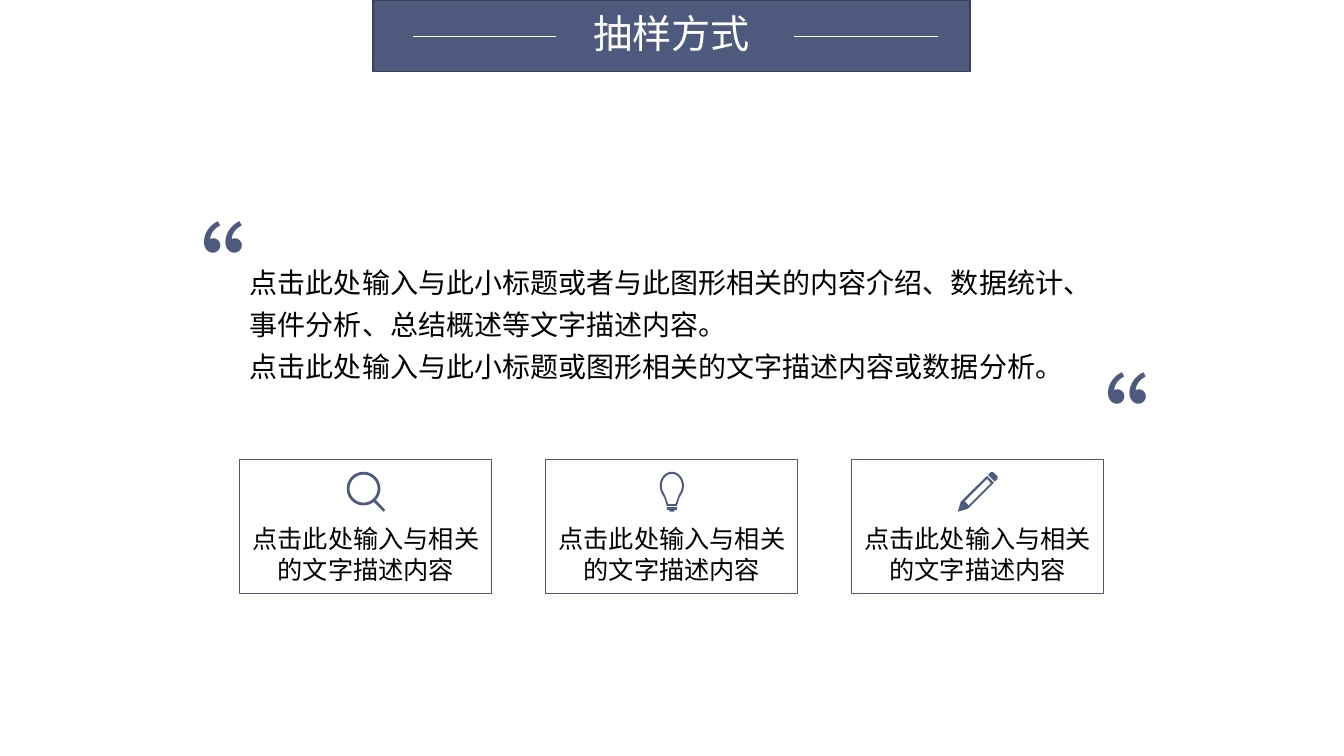
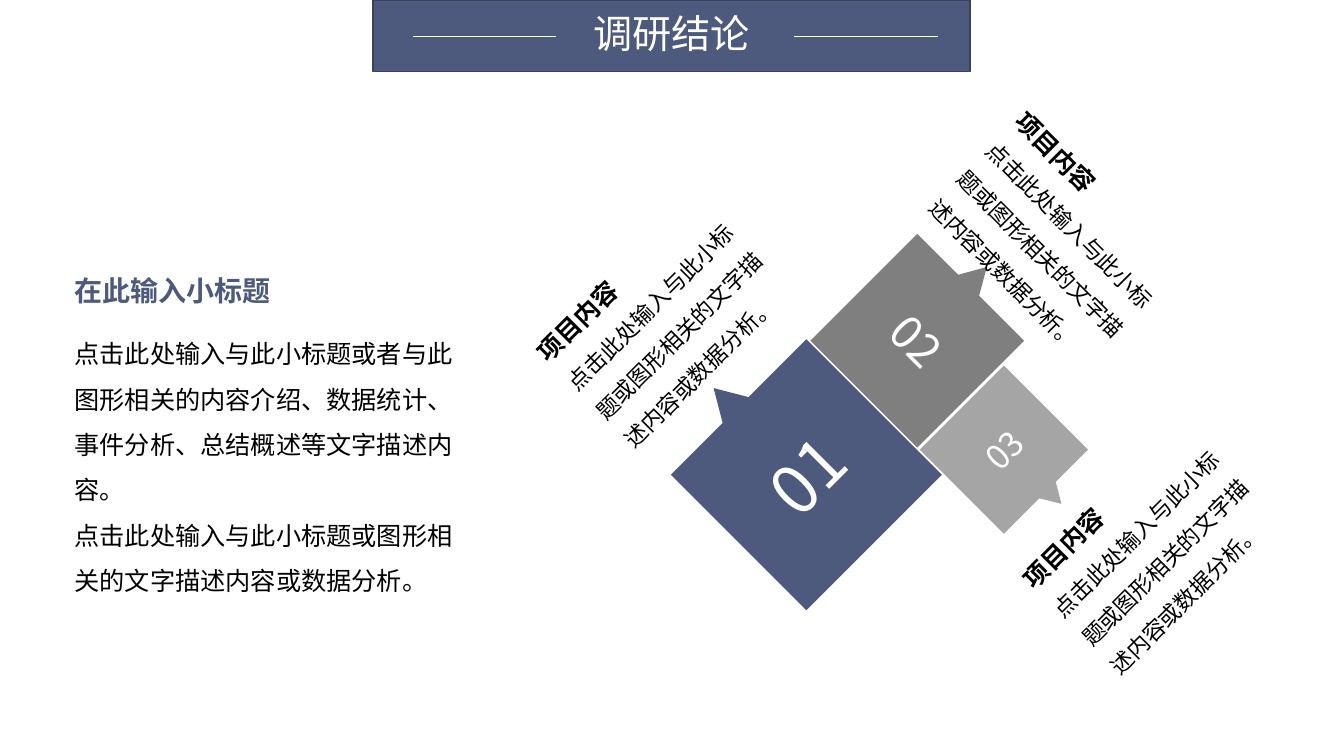
import math
from dataclasses import dataclass

import pptx
import pptx.dml.color
import pptx.enum.lang
import pptx.enum.shapes
import pptx.enum.text
import pptx.oxml
import pptx.oxml.ns
import pptx.util
from pptx.shapes.autoshape import Shape
from pptx.slide import Slide
from pptx.text.text import TextFrame

Pt = pptx.util.Pt
SHAPES = pptx.enum.shapes.MSO_SHAPE
ALIGN = pptx.enum.text.PP_ALIGN
ANCHOR = pptx.enum.text.MSO_ANCHOR
AUTO_SIZE = pptx.enum.text.MSO_AUTO_SIZE

FONT = "Noto Sans CJK SC"
NAVY = "4D5A7D"
NAVY_EDGE = "39435C"
GRAY = "7F7F7F"
LIGHT_GRAY = "A5A5A5"
WHITE = "FFFFFF"
BLACK = "000000"

SLIDE_WIDTH, SLIDE_HEIGHT = 960, 540
LONG_TEXT = "点击此处输入与此小标题或者与此图形相关的内容介绍、数据统计、事件分析、总结概述等文字描述内容。"
SHORT_TEXT = "点击此处输入与此小标题或图形相关的文字描述内容或数据分析。"
CARD_TEXT = "点击此处输入与相关的文字描述内容"

Point = tuple[float, float]
Contour = list[Point]


@dataclass(frozen=True)
class Box:
    """A frame in points, turned by rotation degrees about its centre."""
    left: float
    top: float
    width: float
    height: float
    rotation: float = 0


@dataclass(frozen=True)
class Icon:
    """Closed outlines in points; an outline inside another cuts a hole."""
    width: float
    contours: list[Contour]


@dataclass(frozen=True)
class Step:
    number: str
    size: float
    color: str
    tile: Box
    pointer: Box
    note: Box


def color_of(hex_code: str) -> pptx.dml.color.RGBColor:
    return pptx.dml.color.RGBColor.from_string(hex_code)


def write_text(frame: TextFrame, text: str, *, size: float, color: str = BLACK,
               bold: bool = False, align: ALIGN = ALIGN.LEFT,
               spacing: float = 1.0) -> None:
    """Add one paragraph, using the first one while it is still empty."""
    paragraph = frame.paragraphs[0]
    if paragraph.runs:
        paragraph = frame.add_paragraph()
    paragraph.alignment = align
    paragraph.line_spacing = spacing
    run = paragraph.add_run()
    run.text = text
    font = run.font
    font.size = Pt(size)
    font.bold = bold
    font.name = FONT
    font.language_id = pptx.enum.lang.MSO_LANGUAGE_ID.SIMPLIFIED_CHINESE
    font.color.rgb = color_of(color)
    east_asian = pptx.oxml.parse_xml(
        f'<a:ea {pptx.oxml.ns.nsdecls("a")} typeface="{FONT}"/>')
    run.font._element.append(east_asian)


def paint(shape: Shape, fill: str | None, line: str | None = None,
          line_width: float = 0.75) -> None:
    shape.shadow.inherit = False
    if fill:
        shape.fill.solid()
        shape.fill.fore_color.rgb = color_of(fill)
    else:
        shape.fill.background()
    if line:
        shape.line.color.rgb = color_of(line)
        shape.line.width = Pt(line_width)
    else:
        shape.line.fill.background()


def add_preset(slide: Slide, kind: SHAPES, box: Box, fill: str | None,
               line: str | None = None, line_width: float = 0.75) -> Shape:
    shape = slide.shapes.add_shape(kind, Pt(box.left), Pt(box.top),
                                   Pt(box.width), Pt(box.height))
    shape.rotation = box.rotation
    paint(shape, fill, line, line_width)
    return shape


def add_text_box(slide: Slide, box: Box, *, wrap: bool = True,
                 anchor: ANCHOR = ANCHOR.TOP) -> TextFrame:
    shape = slide.shapes.add_textbox(Pt(box.left), Pt(box.top),
                                     Pt(box.width), Pt(box.height))
    shape.rotation = box.rotation
    frame = shape.text_frame
    frame.word_wrap = wrap
    frame.vertical_anchor = anchor
    frame.auto_size = AUTO_SIZE.SHAPE_TO_FIT_TEXT if wrap else AUTO_SIZE.NONE
    return frame


def add_rule(slide: Slide, start: float, end: float, y: float) -> None:
    connector = slide.shapes.add_connector(
        pptx.enum.shapes.MSO_CONNECTOR.STRAIGHT, Pt(start), Pt(y), Pt(end), Pt(y))
    connector.line.color.rgb = color_of(WHITE)
    connector.line.width = Pt(0.5)
    connector._element.spPr.append(
        pptx.oxml.parse_xml(f'<a:effectLst {pptx.oxml.ns.nsdecls("a")}/>'))


def add_titled_slide(presentation: pptx.presentation.Presentation, title: str) -> Slide:
    slide = presentation.slides.add_slide(presentation.slide_layouts[6])
    add_preset(slide, SHAPES.RECTANGLE, Box(266.6, 0, 426.4, 51.1), NAVY, NAVY_EDGE, 1)
    for start, end in ((397.4, 294.8), (567.2, 669.8)):
        add_rule(slide, start, end, 25.9)
    frame = add_text_box(slide, Box(356.4, 6.5, 247, 38.2), wrap=False,
                         anchor=ANCHOR.MIDDLE)
    write_text(frame, title, size=28, color=WHITE, align=ALIGN.CENTER, spacing=0.9)
    return slide


def arc(center: Point, radius_x: float, radius_y: float,
        start: int = 0, end: int = 360) -> Contour:
    """Points on an ellipse, clockwise in degrees from the right."""
    return [(center[0] + radius_x * math.cos(math.radians(angle)),
             center[1] + radius_y * math.sin(math.radians(angle)))
            for angle in range(start, end + 1, 6)]


def add_icon(slide: Slide, icon: Icon, center_x: float, top: float) -> None:
    contours = [[(Pt(x), Pt(y)) for x, y in contour] for contour in icon.contours]
    first, *others = contours
    builder = slide.shapes.build_freeform(*first[0], scale=1.0)
    builder.add_line_segments(first[1:], close=True)
    for contour in others:
        builder.move_to(*contour[0])
        builder.add_line_segments(contour[1:], close=True)
    shape = builder.convert_to_shape(Pt(center_x - icon.width / 2), Pt(top))
    paint(shape, NAVY)


LENS = (12, 12)
MAGNIFIER = Icon(27.4, [
    arc(LENS, 12, 12),
    arc(LENS, 10, 10),
    [(20.9, 20.2), (27.4, 27.2), (26.2, 28.5), (19.4, 21.6)],
])
BULB_CENTER = (8.6, 10)
BULB = Icon(17.2, [
    arc(BULB_CENTER, 8.6, 10, 138, 402) + [(13.7, 19.4), (12.2, 24.4), (5, 24.4), (3.5, 19.4)],
    arc(BULB_CENTER, 7.2, 8.5, 138, 402) + [(12.8, 18.7), (11.2, 23), (6, 23), (4.4, 18.7)],
    [(5, 25.2), (12.2, 25.2), (12.2, 27.2), (10.8, 27.2), (10, 28.5),
     (7.2, 28.5), (6.4, 27.2), (5, 27.2)],
])
PENCIL = Icon(28.6, [
    [(20.9, 2.9), (25.8, 7.8), (7.2, 26.4), (0, 28.5), (2.2, 21.4)],
    [(20.9, 5), (5, 20.9), (7.8, 24), (23.7, 8.1)],
    [(21.6, 2.2), (23.3, 0.5), (24.5, 0), (25.8, 0.6), (28, 2.8),
     (28.6, 4.1), (28, 5.4), (26.4, 7)],
])

STEPS = [
    Step("01", 48, NAVY, Box(507.6, 270.7, 136.8, 136.8, 315),
         Box(504, 273.6, 28.8, 24.5, 315), Box(382.3, 158.4, 183.6, 127.4, 315)),
    Step("02", 32, GRAY, Box(601.2, 189.4, 108, 108, 45),
         Box(686.9, 187.9, 22.3, 19.4, 45), Box(669.6, 106.6, 183.6, 127.4, 45)),
    Step("03", 24, LIGHT_GRAY, Box(674.6, 278.6, 85, 85, 315),
         Box(743.8, 347, 18, 15.1, 135), Box(729.4, 320.4, 183.6, 127.4, 315)),
]


def build_sampling_slide(presentation: pptx.presentation.Presentation) -> None:
    slide = add_titled_slide(presentation, "抽样方式")
    for left, top in ((89.3, 142.6), (734.4, 250.6)):
        quote = add_text_box(slide, Box(left, top, 136.8, 55.4), wrap=False)
        write_text(quote, "“", size=80, color=NAVY)
    body = add_text_box(slide, Box(171.4, 180, 617, 97.9))
    for text in (LONG_TEXT, SHORT_TEXT):
        write_text(body, text, size=20, spacing=1.25)

    first_left, pitch, card_width = 171.4, 218.5, 180
    for index, icon in enumerate((MAGNIFIER, BULB, PENCIL)):
        left = first_left + index * pitch
        card = add_preset(slide, SHAPES.RECTANGLE, Box(left, 328.3, card_width, 95.8),
                          None, NAVY)
        frame = card.text_frame
        frame.word_wrap = True
        frame.vertical_anchor = ANCHOR.MIDDLE
        frame.margin_top = Pt(42.5)
        write_text(frame, CARD_TEXT, size=18, align=ALIGN.CENTER)
        add_icon(slide, icon, left + card_width / 2, 337)


def build_conclusion_slide(presentation: pptx.presentation.Presentation) -> None:
    slide = add_titled_slide(presentation, "调研结论")
    for step in STEPS:
        tile = add_preset(slide, SHAPES.RECTANGLE, step.tile, step.color)
        tile.text_frame.vertical_anchor = ANCHOR.MIDDLE
        write_text(tile.text_frame, step.number, size=step.size, color=WHITE,
                   align=ALIGN.CENTER)
        add_preset(slide, SHAPES.ISOSCELES_TRIANGLE, step.pointer, step.color)
    for step in STEPS:
        note = add_text_box(slide, step.note)
        write_text(note, "项目内容", size=18, bold=True, spacing=1.5)
        write_text(note, SHORT_TEXT, size=16, spacing=1.5)

    heading = add_text_box(slide, Box(46.1, 191.5, 283.7, 31.7))
    write_text(heading, "在此输入小标题", size=20, color=NAVY, bold=True)
    body = add_text_box(slide, Box(46.1, 227.5, 293, 203.8))
    for text in (LONG_TEXT, SHORT_TEXT):
        write_text(body, text, size=18, spacing=1.5)


def main() -> None:
    presentation = pptx.Presentation()
    presentation.slide_width = Pt(SLIDE_WIDTH)
    presentation.slide_height = Pt(SLIDE_HEIGHT)
    build_sampling_slide(presentation)
    build_conclusion_slide(presentation)
    presentation.save("out.pptx")


if __name__ == "__main__":
    main()
